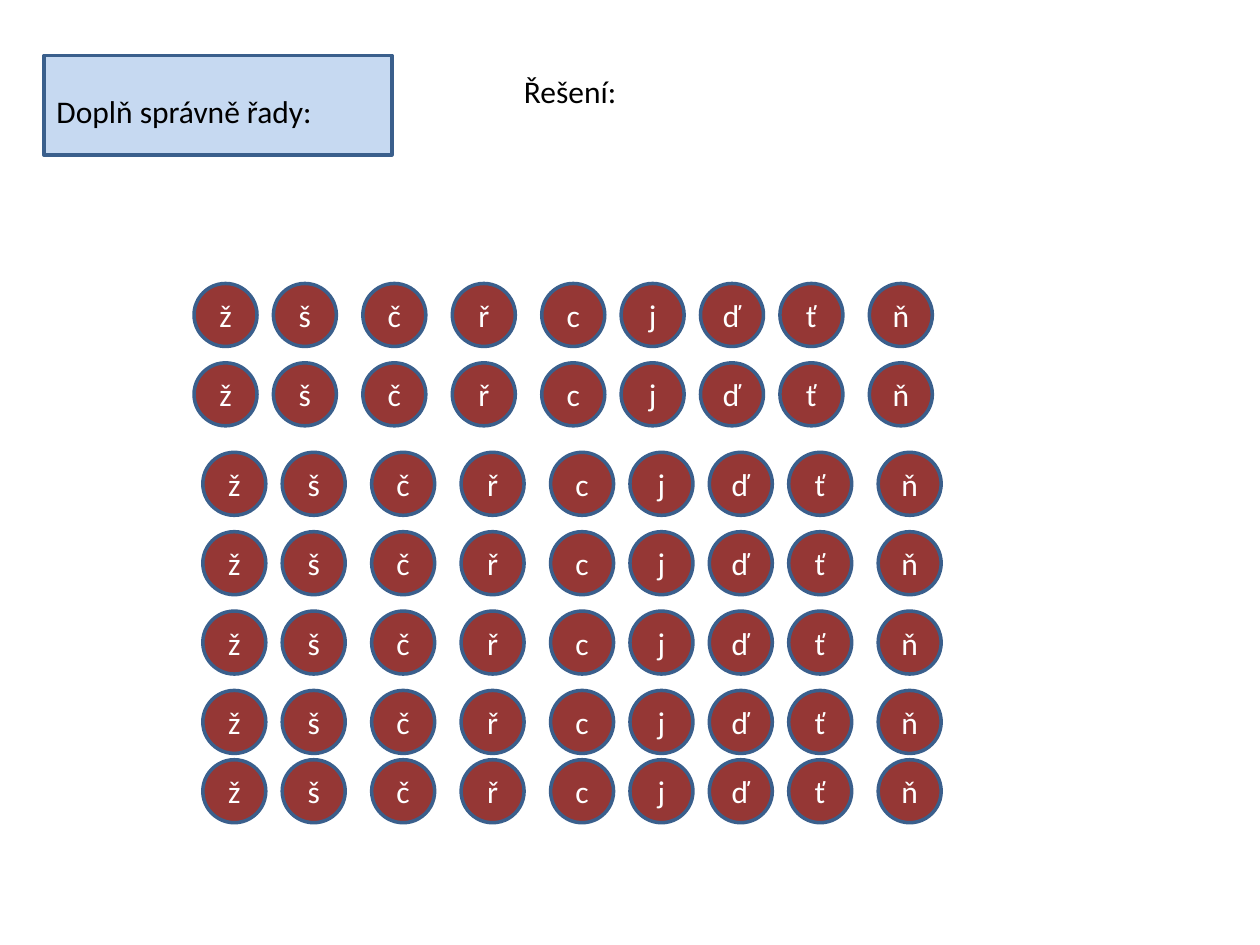
"""Build a letter-row exercise slide with a title, an answer label and rows of letter discs."""
from itertools import accumulate

from pptx import Presentation
from pptx import util as u
from pptx.dml.color import RGBColor
from pptx.enum import shapes, text

COLORS = {"panel": "C6D9F1", "disc": "953735", "outline": "3A5F8C", "ink": "000000", "letter": "FFFFFF"}
FONT, FONT_SIZE = "Calibri", 18
PANEL = (0.35, 0.44, 2.76, 0.79)
LABELS = [
    ("Doplň správně řady:", (0.35, 0.68, 6.77, 0.4)),
    ("Řešení:", (4.06, 0.52, 1.42, 0.4)),
]
LETTERS = "žščřcjďťň"
NARROW, WIDE = 0.63, 0.71
STEPS = [NARROW, WIDE, WIDE, WIDE, NARROW, NARROW, NARROW, WIDE]
ROWS = [(1.54, 2.25), (1.54, 2.88), (1.61, 3.59), (1.61, 4.22), (1.61, 4.85), (1.61, 5.48), (1.61, 6.03)]
DISC_SIZE = 0.5


def color(name):
    return RGBColor.from_string(COLORS[name])


def write(shape, words, ink):
    para = shape.text_frame.paragraphs[0]
    para.text = words
    para.font.name = FONT
    para.font.size = u.Pt(FONT_SIZE)
    para.font.color.rgb = color(ink)
    return para


def add_outlined(page, kind, place, fill):
    shape = page.shapes.add_shape(kind, *map(u.Inches, place))
    shape.shadow.inherit = False
    shape.fill.solid()
    shape.fill.fore_color.rgb = color(fill)
    shape.line.color.rgb = color("outline")
    shape.line.width = u.Pt(2)
    return shape


def add_label(page, words, place):
    box = page.shapes.add_textbox(*map(u.Inches, place))
    box.text_frame.word_wrap = True
    box.text_frame.auto_size = text.MSO_AUTO_SIZE.SHAPE_TO_FIT_TEXT
    write(box, words, "ink")


def add_disc(page, letter, left, top):
    disc = add_outlined(page, shapes.MSO_SHAPE.FLOWCHART_CONNECTOR, (left, top, DISC_SIZE, DISC_SIZE), "disc")
    disc.text_frame.vertical_anchor = text.MSO_ANCHOR.MIDDLE
    write(disc, letter, "letter").alignment = text.PP_ALIGN.CENTER


def main():
    deck = Presentation()
    deck.slide_width, deck.slide_height = u.Inches(10), u.Inches(7.5)
    page = deck.slides.add_slide(deck.slide_layouts[6])
    add_outlined(page, shapes.MSO_SHAPE.RECTANGLE, PANEL, "panel")
    for words, place in LABELS:
        add_label(page, words, place)
    for row_left, top in ROWS:
        for letter, left in zip(LETTERS, accumulate(STEPS, initial=row_left)):
            add_disc(page, letter, left, top)
    deck.save("out.pptx")


if __name__ == "__main__":
    main()
